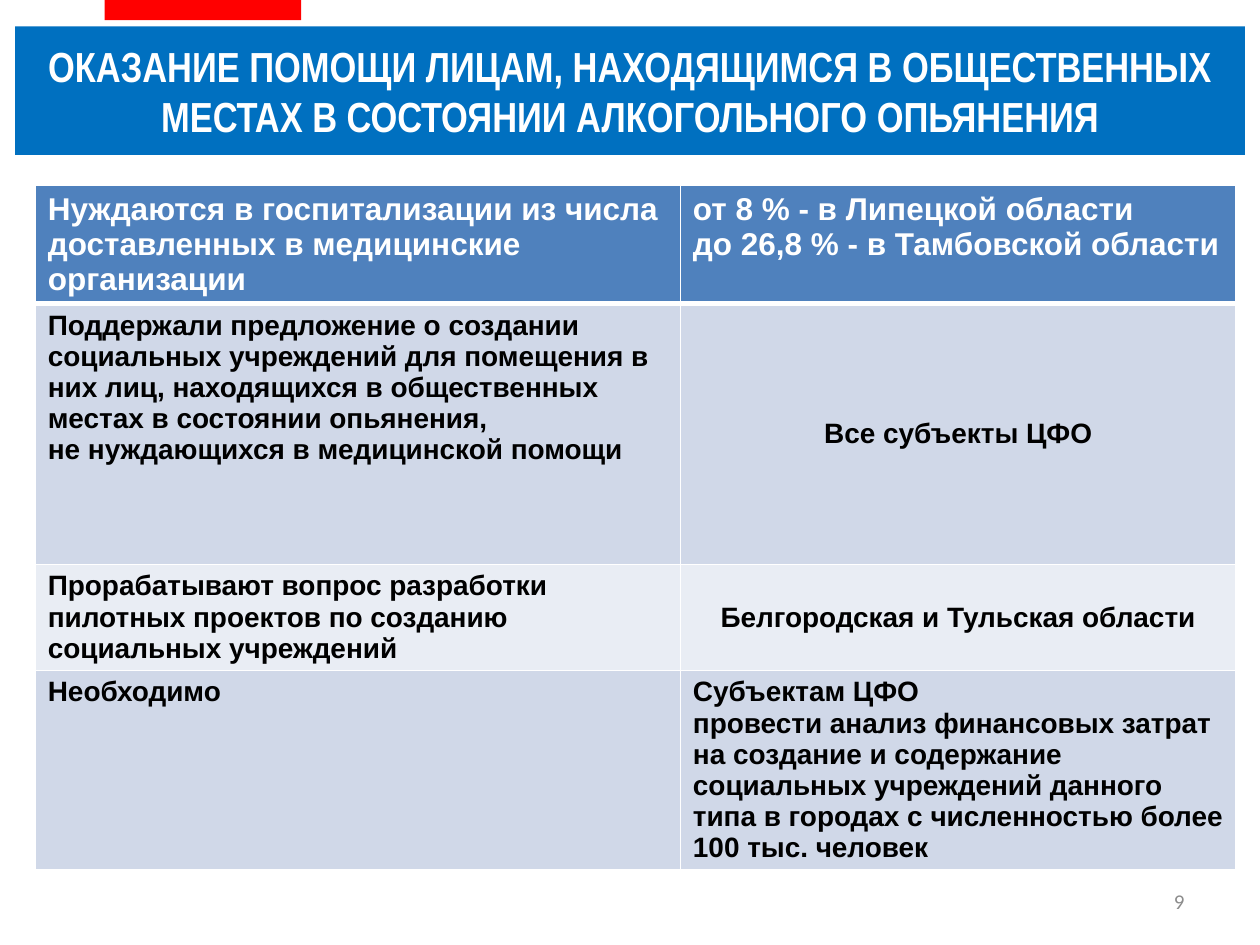
from lxml.etree import SubElement
from pptx import Presentation
from pptx.dml.color import RGBColor
from pptx.enum.shapes import MSO_SHAPE as Shape
from pptx.enum.text import MSO_ANCHOR as Anchor, PP_ALIGN as Align
from pptx.oxml.ns import qn
from pptx.util import Inches, Pt

WHITE, BLACK, GRAY = "FFFFFF", "000000", "8C8C8C"
BLUE, RED = "0070C0", "FF0000"
HEAD, BAND_DARK, BAND_LIGHT = "4F81BD", "D0D8E8", "E9EDF4"


def color(value):
    return RGBColor.from_string(value)


class SlideBuilder:
    """Draws on a grid of 100 columns by 75 rows, 0.1 inch each."""

    font = "Arial"
    unit = 0.1

    def __init__(self, deck):
        self.slide = deck.slides.add_slide(deck.slide_layouts[6])

    def units(self, *lengths):
        return [Inches(length * self.unit) for length in lengths]

    def add_text(self, frame, lines, size, ink, bold=True, font=None, align=Align.LEFT):
        frame.word_wrap = True
        for index, line in enumerate(lines):
            para = frame.paragraphs[0] if index == 0 else frame.add_paragraph()
            para.alignment = align
            span = para.add_run()
            span.text = line
            span.font.name = font or self.font
            span.font.size = Pt(size)
            span.font.bold = bold
            span.font.color.rgb = color(ink)

    def bar(self, place, fill):
        box = self.slide.shapes.add_shape(Shape.RECTANGLE, *self.units(*place))
        box.shadow.inherit = False
        box.fill.solid()
        box.fill.fore_color.rgb = color(fill)
        box.line.fill.background()
        box.text_frame.vertical_anchor = Anchor.MIDDLE
        return box

    def label(self, place, text, **style):
        box = self.slide.shapes.add_textbox(*self.units(*place))
        box.text_frame.vertical_anchor = Anchor.MIDDLE
        self.add_text(box.text_frame, [text], **style)

    def borders(self, cell, bottom):
        properties = cell._tc.get_or_add_tcPr()
        widths = {"a:lnL": 1, "a:lnR": 1, "a:lnT": 1, "a:lnB": bottom}
        for position, (side, width) in enumerate(widths.items()):
            line = SubElement(properties, qn(side), w=str(Pt(width)))
            fill = SubElement(line, qn("a:solidFill"))
            SubElement(fill, qn("a:srgbClr"), val=WHITE)
            properties.insert(position, line)

    def table(self, place, widths, heights, rows, fills):
        frame = self.slide.shapes.add_table(len(rows), len(widths), *self.units(*place))
        table = frame.table
        for column, width in zip(table.columns, self.units(*widths)):
            column.width = width
        for row, height in zip(table.rows, self.units(*heights)):
            row.height = height
        for r, (row, fill) in enumerate(zip(rows, fills)):
            size, ink, bottom = (18, WHITE, 3) if r == 0 else (16, BLACK, 1)
            for c, (lines, align, anchor) in enumerate(row):
                cell = table.cell(r, c)
                cell.fill.solid()
                cell.fill.fore_color.rgb = color(fill)
                cell.vertical_anchor = anchor
                self.borders(cell, bottom)
                self.add_text(cell.text_frame, lines, size, ink, align=align)


def top(*lines):
    return lines, Align.LEFT, Anchor.TOP


def centered(*lines):
    return lines, Align.CENTER, Anchor.MIDDLE


def middle(*lines):
    return lines, Align.LEFT, Anchor.MIDDLE


def main():
    deck = Presentation()
    deck.slide_width, deck.slide_height = Inches(10), Inches(7.5)
    page = SlideBuilder(deck)

    # Title banner and red accent
    banner = page.bar((1.2, 2.1, 97.6, 10.2), BLUE)
    page.add_text(
        banner.text_frame,
        ["ОКАЗАНИЕ ПОМОЩИ ЛИЦАМ, НАХОДЯЩИМСЯ В ОБЩЕСТВЕННЫХ "
         "МЕСТАХ В СОСТОЯНИИ АЛКОГОЛЬНОГО ОПЬЯНЕНИЯ"],
        24, WHITE, font="Arial Narrow", align=Align.CENTER,
    )
    page.bar((8.3, 0, 15.6, 1.6), RED)

    # Findings by question; rows grow to fit their text
    rows = [
        (top("Нуждаются в госпитализации из числа доставленных "
             "в медицинские организации"),
         top("от 8 % - в Липецкой области",
             "до 26,8 % - в Тамбовской области")),
        (top("Поддержали предложение о создании социальных учреждений "
             "для помещения в них лиц, находящихся в общественных местах "
             "в состоянии опьянения,",
             "не нуждающихся в медицинской помощи"),
         centered("Все субъекты ЦФО")),
        (top("Прорабатывают вопрос разработки пилотных проектов "
             "по созданию социальных учреждений"),
         centered("Белгородская и Тульская области")),
        (top("Необходимо"),
         middle("Субъектам ЦФО",
                "провести анализ финансовых затрат на создание и содержание "
                "социальных учреждений данного типа в городах "
                "с численностью более 100 тыс. человек")),
    ]
    page.table((2.8, 14.7, 95.3, 56.7), (51.2, 44.1), (4.1, 20.7, 7.1, 7.1),
               rows, (HEAD, BAND_DARK, BAND_LIGHT, BAND_DARK))

    # Page number
    page.label((71.7, 69.5, 23.3, 4), "9", size=12, ink=GRAY, bold=False,
               font="Calibri", align=Align.RIGHT)

    deck.save("out.pptx")


if __name__ == "__main__":
    main()
